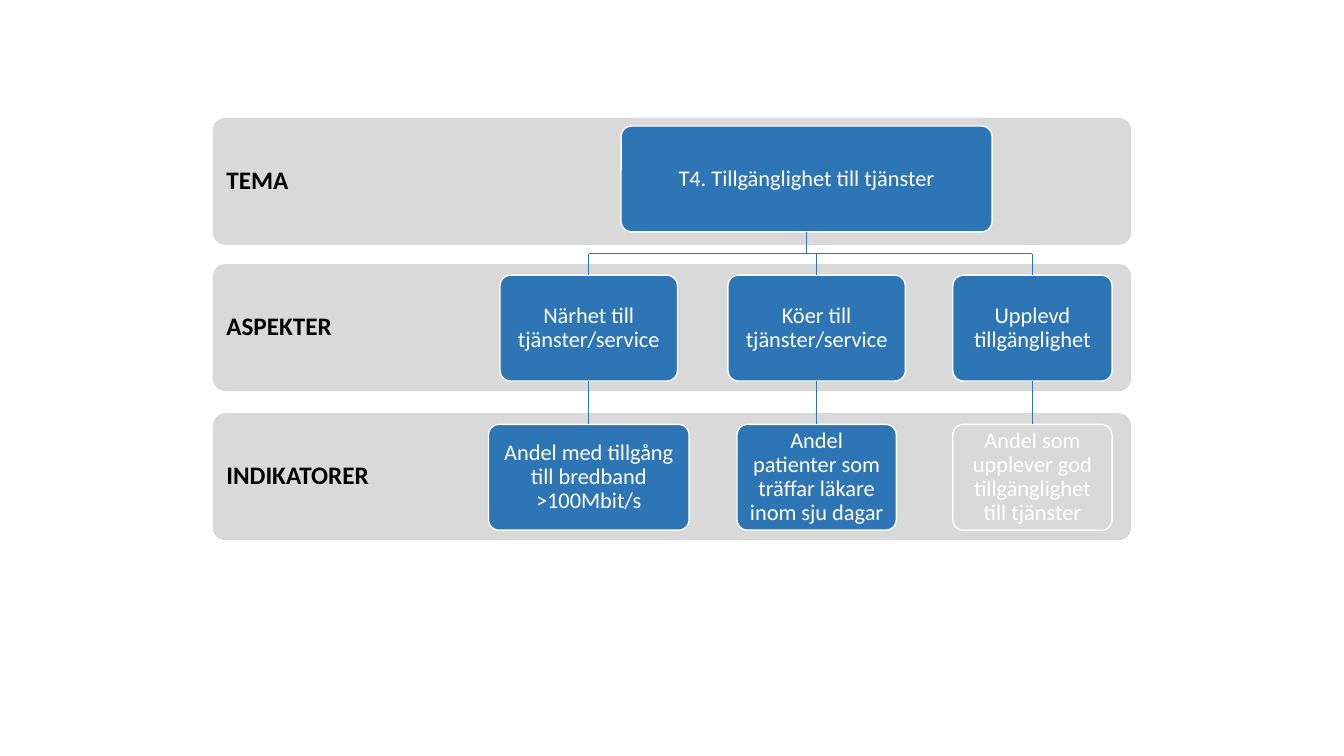
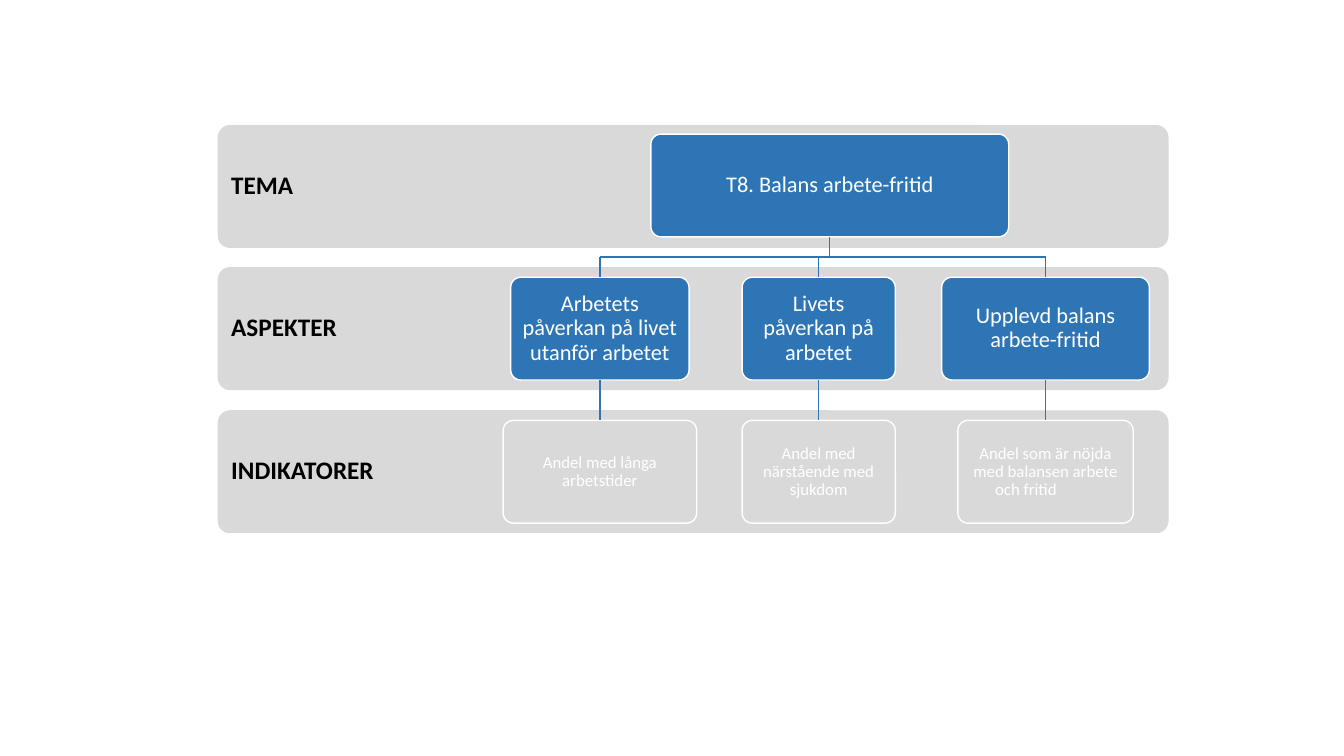
"""Build two theme trees, each on three labelled bands."""
from dataclasses import dataclass

from lxml import etree
from pptx import Presentation
from pptx.dml.color import RGBColor
from pptx.enum.shapes import MSO_CONNECTOR, MSO_SHAPE
from pptx.enum.text import MSO_ANCHOR, PP_ALIGN
from pptx.oxml.ns import qn
from pptx.shapes.autoshape import Shape
from pptx.shapes.connector import Connector
from pptx.slide import Slide
from pptx.util import Inches, Pt

ROUNDED = MSO_SHAPE.ROUNDED_RECTANGLE
STRAIGHT = MSO_CONNECTOR.STRAIGHT
MIDDLE = MSO_ANCHOR.MIDDLE
LEFT, CENTER = PP_ALIGN.LEFT, PP_ALIGN.CENTER
TOP_SITE, BOTTOM_SITE = 0, 2

FONT = "Calibri"
BLUE, GREY, WHITE, BLACK = "2E75B6", "D9D9D9", "FFFFFF", "000000"
LEVELS = ("TEMA", "ASPEKTER", "INDIKATORER")


@dataclass(frozen=True)
class Node:
    text: str
    center: float
    width: float
    filled: bool = True


@dataclass(frozen=True)
class Branch:
    aspect: Node
    indicator: Node


@dataclass(frozen=True)
class Tree:
    band_left: float
    band_width: float
    band_height: float
    band_tops: tuple[float, ...]
    node_top: float
    node_pitch: float
    node_height: float
    indicator_size: int
    indicator_inset: float
    theme: Node
    branches: tuple[Branch, ...]


TREES = (
    Tree(
        2.11, 9.11, 1.26, (1.17, 2.62, 4.10), 1.25, 1.48, 1.05, 16, 0.07,
        Node("T4. Tillgänglighet till tjänster", 8.00, 3.68),
        (
            Branch(Node("Närhet till tjänster/service", 5.84, 1.76),
                   Node("Andel med tillgång till bredband >100Mbit/s", 5.84, 1.99)),
            Branch(Node("Köer till tjänster/service", 8.10, 1.76),
                   Node("Andel patienter som träffar läkare inom sju dagar", 8.10, 1.58)),
            Branch(Node("Upplevd tillgänglighet", 10.24, 1.58),
                   Node("Andel som upplever god tillgänglighet till tjänster", 10.24, 1.58, False)),
        ),
    ),
    Tree(
        2.16, 9.43, 1.22, (1.24, 2.65, 4.07), 1.33, 1.42, 1.02, 12, 0.05,
        Node("T8. Balans arbete-fritid", 8.23, 3.55),
        (
            Branch(Node("Arbetets påverkan på livet utanför arbetet", 5.95, 1.77),
                   Node("Andel med långa arbetstider", 5.95, 1.92, False)),
            Branch(Node("Livets påverkan på arbetet", 8.12, 1.52),
                   Node("Andel med närstående med sjukdom", 8.12, 1.52, False)),
            Branch(Node("Upplevd balans arbete-fritid", 10.37, 2.06),
                   Node("Andel som är nöjda med balansen arbete och fritid\t", 10.37, 1.74, False)),
        ),
    ),
)


def rgb(color: str) -> RGBColor:
    return RGBColor.from_string(color)


def add_panel(slide: Slide, left: float, top: float, width: float, height: float,
              fill: str | None, outline: str | None) -> Shape:
    panel = slide.shapes.add_shape(
        ROUNDED, Inches(left), Inches(top), Inches(width), Inches(height))
    panel.adjustments[0] = 0.1
    panel.shadow.inherit = False
    if fill:
        panel.fill.solid()
        panel.fill.fore_color.rgb = rgb(fill)
    else:
        panel.fill.background()
    if outline:
        panel.line.color.rgb = rgb(outline)
        panel.line.width = Pt(1)
    else:
        panel.line.fill.background()
    return panel


def write_text(panel: Shape, text: str, size: int, color: str, inset: float,
               align: PP_ALIGN, bold: bool = False) -> None:
    frame = panel.text_frame
    frame.word_wrap = True
    frame.vertical_anchor = MIDDLE
    frame.margin_left = frame.margin_right = Inches(inset)
    frame.margin_top = frame.margin_bottom = Inches(inset)
    paragraph = frame.paragraphs[0]
    paragraph.text = text
    paragraph.alignment = align
    paragraph.line_spacing = 0.9
    paragraph.font.name = FONT
    paragraph.font.size = Pt(size)
    paragraph.font.bold = bold
    paragraph.font.color.rgb = rgb(color)


def add_line(slide: Slide, x1: float, y1: float, x2: float, y2: float) -> Connector:
    line = slide.shapes.add_connector(
        STRAIGHT, Inches(x1), Inches(y1), Inches(x2), Inches(y2))
    line.line.color.rgb = rgb(BLUE)
    line.line.width = Pt(1)
    etree.SubElement(line._element.spPr, qn("a:effectLst"))
    return line


def add_node(slide: Slide, tree: Tree, node: Node, level: int,
             size: int = 16, inset: float = 0.07) -> Shape:
    panel = add_panel(
        slide, node.center - node.width / 2, tree.node_top + level * tree.node_pitch,
        node.width, tree.node_height, BLUE if node.filled else None, WHITE)
    write_text(panel, node.text, size, WHITE, inset, CENTER)
    return panel


def draw_tree(slide: Slide, tree: Tree) -> None:
    for level, top in zip(LEVELS, tree.band_tops):
        band = add_panel(slide, tree.band_left, top, tree.band_width,
                         tree.band_height, GREY, None)
        write_text(band, level, 18, BLACK, 0.1, LEFT, bold=True)

    theme = add_node(slide, tree, tree.theme, 0)
    theme_bottom = tree.node_top + tree.node_height
    aspect_top = tree.node_top + tree.node_pitch
    aspect_bottom = aspect_top + tree.node_height
    indicator_top = aspect_top + tree.node_pitch
    bus = (theme_bottom + aspect_top) / 2

    trunk = add_line(slide, tree.theme.center, theme_bottom, tree.theme.center, bus)
    trunk.begin_connect(theme, BOTTOM_SITE)
    add_line(slide, tree.branches[0].aspect.center, bus,
             tree.branches[-1].aspect.center, bus)

    for branch in tree.branches:
        center = branch.aspect.center
        aspect = add_node(slide, tree, branch.aspect, 1)
        indicator = add_node(slide, tree, branch.indicator, 2,
                             tree.indicator_size, tree.indicator_inset)
        drop = add_line(slide, center, bus, center, aspect_top)
        drop.end_connect(aspect, TOP_SITE)
        link = add_line(slide, center, aspect_bottom, center, indicator_top)
        link.begin_connect(aspect, BOTTOM_SITE)
        link.end_connect(indicator, TOP_SITE)


def main() -> None:
    presentation = Presentation()
    presentation.slide_width = Inches(13.33)
    presentation.slide_height = Inches(7.5)
    blank = presentation.slide_layouts[6]
    for tree in TREES:
        draw_tree(presentation.slides.add_slide(blank), tree)
    presentation.save("out.pptx")


if __name__ == "__main__":
    main()
